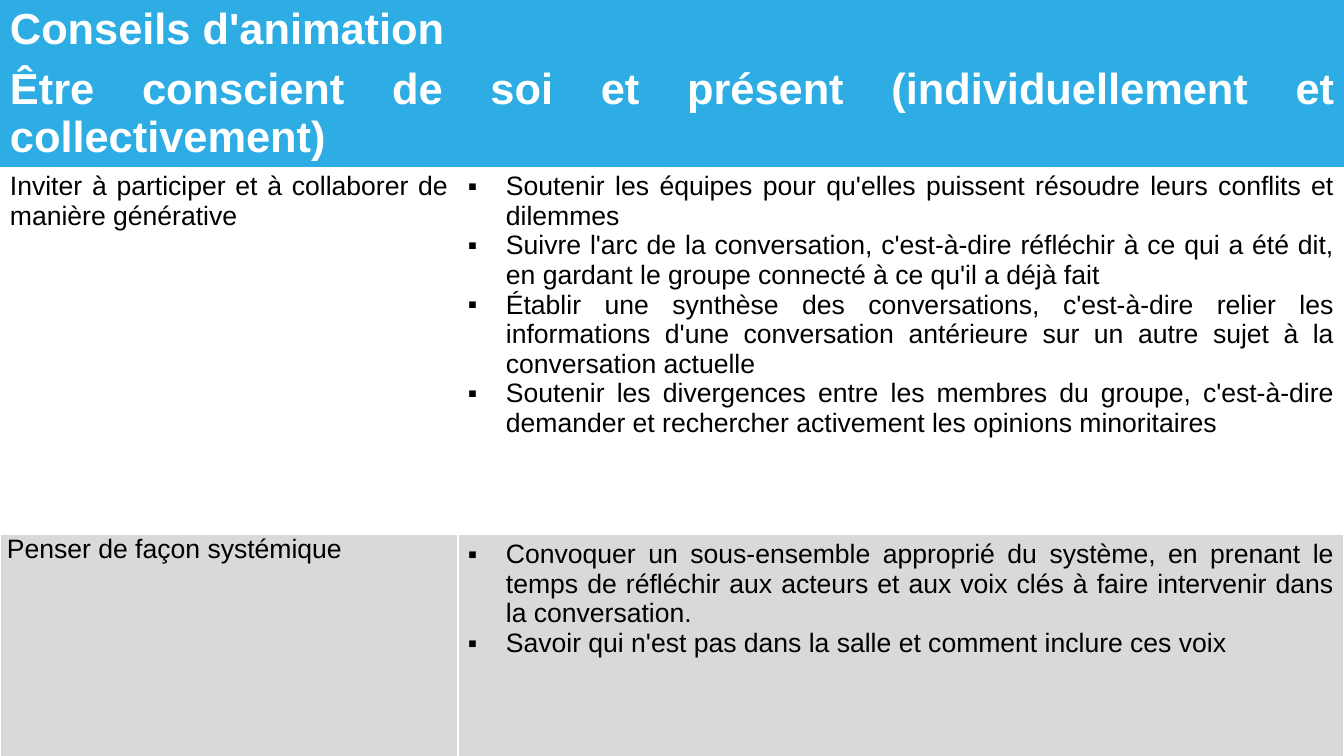
from lxml import etree
from pptx import Presentation
from pptx.dml.color import RGBColor
from pptx.enum.text import MSO_ANCHOR, PP_ALIGN
from pptx.oxml.ns import qn
from pptx.util import Emu, Pt

JUSTIFY = PP_ALIGN.JUSTIFY
TOP = MSO_ANCHOR.TOP
EMU_PER_PX = 914400 / 100.8
BULLET_INDENT = 38

COLUMN_WIDTHS = [458, 886]
ROW_HEIGHTS = [131, 368, 257]
TITLES = [
    "Conseils d'animation",
    "Être conscient de soi et présent (individuellement et collectivement)",
]
# Each row: topic, topic cell margins (left/right, top/bottom), fill, advice
TOPICS = [
    ("Inviter à participer et à collaborer de manière générative", (10, 5), "FFFFFF", [
        "Soutenir les équipes pour qu'elles puissent résoudre leurs conflits et dilemmes",
        "Suivre l'arc de la conversation, c'est-à-dire réfléchir à ce qui a été dit, "
        "en gardant le groupe connecté à ce qu'il a déjà fait",
        "Établir une synthèse des conversations, c'est-à-dire relier les informations "
        "d'une conversation antérieure sur un autre sujet à la conversation actuelle",
        "Soutenir les divergences entre les membres du groupe, c'est-à-dire demander "
        "et rechercher activement les opinions minoritaires",
    ]),
    ("Penser de façon systémique", (7, 0), "D9D9D9", [
        "Convoquer un sous-ensemble approprié du système, en prenant le temps de "
        "réfléchir aux acteurs et aux voix clés à faire intervenir dans la conversation.",
        "Savoir qui n'est pas dans la salle et comment inclure ces voix",
    ]),
]


def px(length):
    return Emu(round(length * EMU_PER_PX))


def color(value):
    return RGBColor.from_string(value)


class TablePage:
    font = "Arial"
    white, black, blue = "FFFFFF", "000000", "2DADE4"
    title_size, body_size = 31, 19

    def __init__(self, deck):
        self.page = deck.slides.add_slide(deck.slide_layouts[6])

    def table(self, widths, heights):
        frame = self.page.shapes.add_table(
            len(heights), len(widths), 0, 0, px(sum(widths)), px(sum(heights)))
        table = frame.table
        table.first_row = table.horz_banding = False
        for column, width in zip(table.columns, widths):
            column.width = px(width)
        for row, height in zip(table.rows, heights):
            row.height = px(height)
        return table

    def borders(self, cell, sides):
        """Draw white lines on the given sides and none on the others."""
        properties = cell._tc.get_or_add_tcPr()
        for side in "LRTB":
            line = etree.SubElement(properties, qn(f"a:ln{side}"), w=str(Pt(1)))
            if side in sides:
                fill = etree.SubElement(line, qn("a:solidFill"))
                etree.SubElement(fill, qn("a:srgbClr"), val=self.white)
            else:
                etree.SubElement(line, qn("a:noFill"))

    def cell(self, cell, fill, sides="", margins=(10, 5)):
        self.borders(cell, sides)
        cell.fill.solid()
        cell.fill.fore_color.rgb = color(fill)
        cell.vertical_anchor = TOP
        cell.margin_left = cell.margin_right = px(margins[0])
        cell.margin_top = cell.margin_bottom = px(margins[1])

    def bullet(self, para):
        properties = para._p.get_or_add_pPr()
        properties.set("marL", str(px(BULLET_INDENT)))
        properties.set("indent", str(px(-BULLET_INDENT)))
        etree.SubElement(properties, qn("a:buFont"), typeface=self.font)
        etree.SubElement(properties, qn("a:buChar"), char="▪")

    def text(self, cell, lines, size, ink, bold=False):
        """Write one justified paragraph per line and return the paragraphs."""
        frame = cell.text_frame
        for index, line in enumerate(lines):
            para = frame.add_paragraph() if index else frame.paragraphs[0]
            para.alignment = JUSTIFY
            span = para.add_run()
            span.text = line
            span.font.name = self.font
            span.font.size = Pt(size)
            span.font.bold = bold
            span.font.color.rgb = color(ink)
        return frame.paragraphs

    def header(self, table, titles):
        title_cell = table.cell(0, 0)
        title_cell.merge(table.cell(0, len(table.columns) - 1))
        self.cell(title_cell, self.blue)
        for para in self.text(title_cell, titles, self.title_size, self.white, bold=True):
            para.space_after = Pt(8)

    def topic(self, table, row, name, margins, fill, advice):
        topic_cell, advice_cell = table.cell(row, 0), table.cell(row, 1)
        self.cell(topic_cell, fill, "LR", margins)
        self.text(topic_cell, [name], self.body_size, self.black)[0].space_after = Pt(8)
        self.cell(advice_cell, fill, "LR")
        paras = self.text(advice_cell, advice, self.body_size, self.black)
        paras[-1].space_after = Pt(12)
        for para in paras:
            self.bullet(para)


def main():
    deck = Presentation()
    deck.slide_width, deck.slide_height = px(1344), px(756)
    page = TablePage(deck)
    table = page.table(COLUMN_WIDTHS, ROW_HEIGHTS)
    page.header(table, TITLES)
    for row, topic in enumerate(TOPICS, start=1):
        page.topic(table, row, *topic)
    deck.save("out.pptx")


if __name__ == "__main__":
    main()
